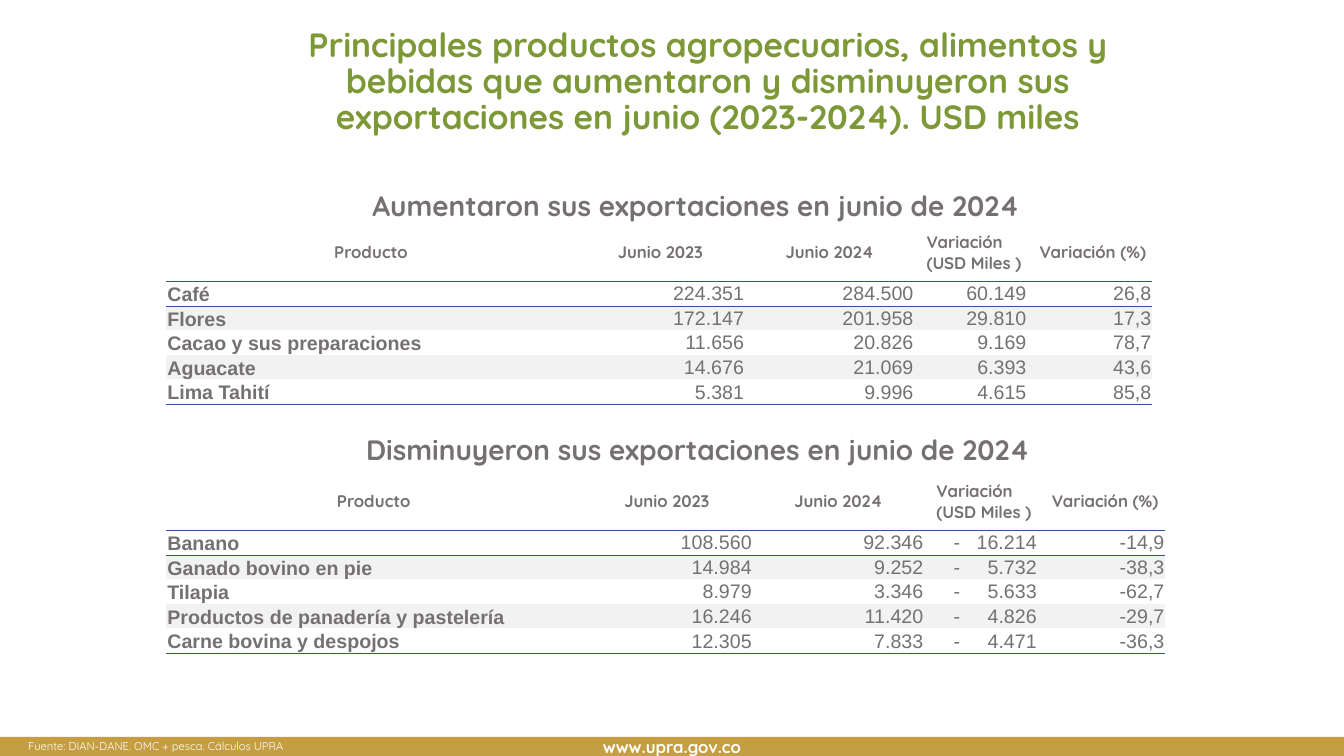
from lxml.etree import SubElement
from pptx import Presentation
from pptx.dml.color import RGBColor
from pptx.enum.shapes import MSO_SHAPE as Shape
from pptx.enum.text import MSO_ANCHOR as Anchor, PP_ALIGN as Align
from pptx.oxml.ns import qn
from pptx.util import Inches, Pt

COLORS = {"green": "7D9837", "gold": "C59E41", "white": "FFFFFF", "head": "767171",
          "body": "757171", "band": "F2F2F2", "rule": "2F5597"}
WIDE, HIGH = 13.33, 7.5
LEFT = 1.65
HEAD_ROW, BODY_ROW = 0.58, 0.244
COLS = (4.06, 1.68, 1.68, 1.18, 1.18)
PAD = 0.01
NO_STYLE = "{2D5ABB26-0587-4C30-8999-92F81FD0307C}"

TITLE = ("Principales productos agropecuarios, alimentos y bebidas que aumentaron y "
         "disminuyeron sus exportaciones en junio (2023-2024). USD miles")
SOURCE = "Fuente: DIAN-DANE. OMC + pesca. Cálculos UPRA"
SITE = "www.upra.gov.co"
HEADS = ("Producto", "Junio 2023", "Junio 2024", "Variación\v(USD Miles )", "Variación (%)")
# heading, heading box, table top, table width, rows
BLOCKS = [
    ("Aumentaron sus exportaciones en junio de 2024", (2.15, 1.82, 9.51, 0.44), 2.21, 9.78, [
        ("Café", "224.351", "284.500", "60.149", "26,8"),
        ("Flores", "172.147", "201.958", "29.810", "17,3"),
        ("Cacao y sus preparaciones", "11.656", "20.826", "9.169", "78,7"),
        ("Aguacate", "14.676", "21.069", "6.393", "43,6"),
        ("Lima Tahití", "5.381", "9.996", "4.615", "85,8")]),
    ("Disminuyeron sus exportaciones en junio de 2024", (1.78, 4.24, 10.29, 0.44), 4.68, 9.91, [
        ("Banano", "108.560", "92.346", "-\t16.214", "-14,9"),
        ("Ganado bovino en pie", "14.984", "9.252", "-\t5.732", "-38,3"),
        ("Tilapia", "8.979", "3.346", "-\t5.633", "-62,7"),
        ("Productos de panadería y pastelería", "16.246", "11.420", "-\t4.826", "-29,7"),
        ("Carne bovina y despojos", "12.305", "7.833", "-\t4.471", "-36,3")]),
]


def rgb(name):
    return RGBColor.from_string(COLORS[name])


def write(frame, text, size, color, bold=False, face="Quicksand", align=Align.CENTER):
    para = frame.paragraphs[0]
    para.alignment = align
    for i, line in enumerate(text.split("\v")):
        if i:
            para.add_line_break()
        run = para.add_run()
        run.text = line
        font = run.font
        font.name, font.size, font.bold = face, Pt(size), bold
        font.color.rgb = rgb(color)
    return para


def add_text(slide, box, *args, **style):
    frame = slide.shapes.add_textbox(*map(Inches, box)).text_frame
    frame.word_wrap = True
    return write(frame, *args, **style)


def add_rule(cell, side):
    line = SubElement(cell._tc.get_or_add_tcPr(), qn("a:" + side), w=str(Pt(0.25)))
    fill = SubElement(line, qn("a:solidFill"))
    SubElement(fill, qn("a:srgbClr"), val=COLORS["rule"])


def add_tab(para, place):
    """Set one right-aligned tab stop, in inches."""
    tabs = SubElement(para._p.get_or_add_pPr(), qn("a:tabLst"))
    SubElement(tabs, qn("a:tab"), pos=str(Inches(place)), algn="r")


def fill_cell(cell, text, row, col, last, width):
    cell.margin_left = cell.margin_right = cell.margin_top = Inches(PAD)
    cell.margin_bottom = 0
    cell.vertical_anchor = Anchor.BOTTOM if row and not col else Anchor.MIDDLE
    frame = cell.text_frame
    if row == 0:
        two = "\v" in text
        if two:
            cell.margin_left = Inches(0.12)
        write(frame, text, 12, "head", True, align=Align.LEFT if two else Align.CENTER)
    else:
        minus = "\t" in text
        if minus:
            cell.margin_left = Inches(0.29)
            add_tab(frame.paragraphs[0], width - 0.37)
        elif col == 3:
            cell.margin_right = Inches(0.07)
        align = Align.LEFT if col == 0 or minus else Align.RIGHT
        write(frame, text, 14, "body", col == 0, "Arial", align)
    if row == 1:
        add_rule(cell, "lnT")
    if row in (0, last):
        add_rule(cell, "lnB")
    if row in (2, 4):
        cell.fill.solid()
        cell.fill.fore_color.rgb = rgb("band")
    else:
        cell.fill.background()


def add_grid(slide, top, wide, rows):
    lines = [HEADS, *rows]
    high = HEAD_ROW + BODY_ROW * len(rows)
    holder = slide.shapes.add_table(len(lines), len(COLS), Inches(LEFT), Inches(top),
                                    Inches(wide), Inches(high))
    table = holder.table
    table.first_row = table.horz_banding = False
    next(table._tbl.iter(qn("a:tableStyleId"))).text = NO_STYLE
    widths = [wide * share / sum(COLS) for share in COLS]
    for col, width in enumerate(widths):
        table.columns[col].width = Inches(width)
    for row, line in enumerate(lines):
        table.rows[row].height = Inches(BODY_ROW if row else HEAD_ROW)
        for col, text in enumerate(line):
            fill_cell(table.cell(row, col), text, row, col, len(rows), widths[col])


def main():
    deck = Presentation()
    deck.slide_width, deck.slide_height = Inches(WIDE), Inches(HIGH)
    slide = deck.slides.add_slide(deck.slide_layouts[6])

    bar = slide.shapes.add_shape(Shape.RECTANGLE, 0, Inches(7.31), Inches(WIDE), Inches(0.19))
    bar.shadow.inherit = False
    bar.fill.solid()
    bar.fill.fore_color.rgb = rgb("gold")
    bar.line.fill.background()
    bar.text_frame.vertical_anchor = Anchor.MIDDLE
    write(bar.text_frame, SITE, 12, "white", True)

    title = add_text(slide, (2.44, 0.23, 9.16, 1.07), TITLE, 24, "green", True)
    title.line_spacing = 0.9
    add_text(slide, (0.18, 7.29, 12.91, 0.24), SOURCE, 8, "white", align=Align.JUSTIFY)
    for heading, box, top, wide, rows in BLOCKS:
        add_text(slide, box, heading, 20, "head", True)
        add_grid(slide, top, wide, rows)
    deck.save("out.pptx")


if __name__ == "__main__":
    main()
